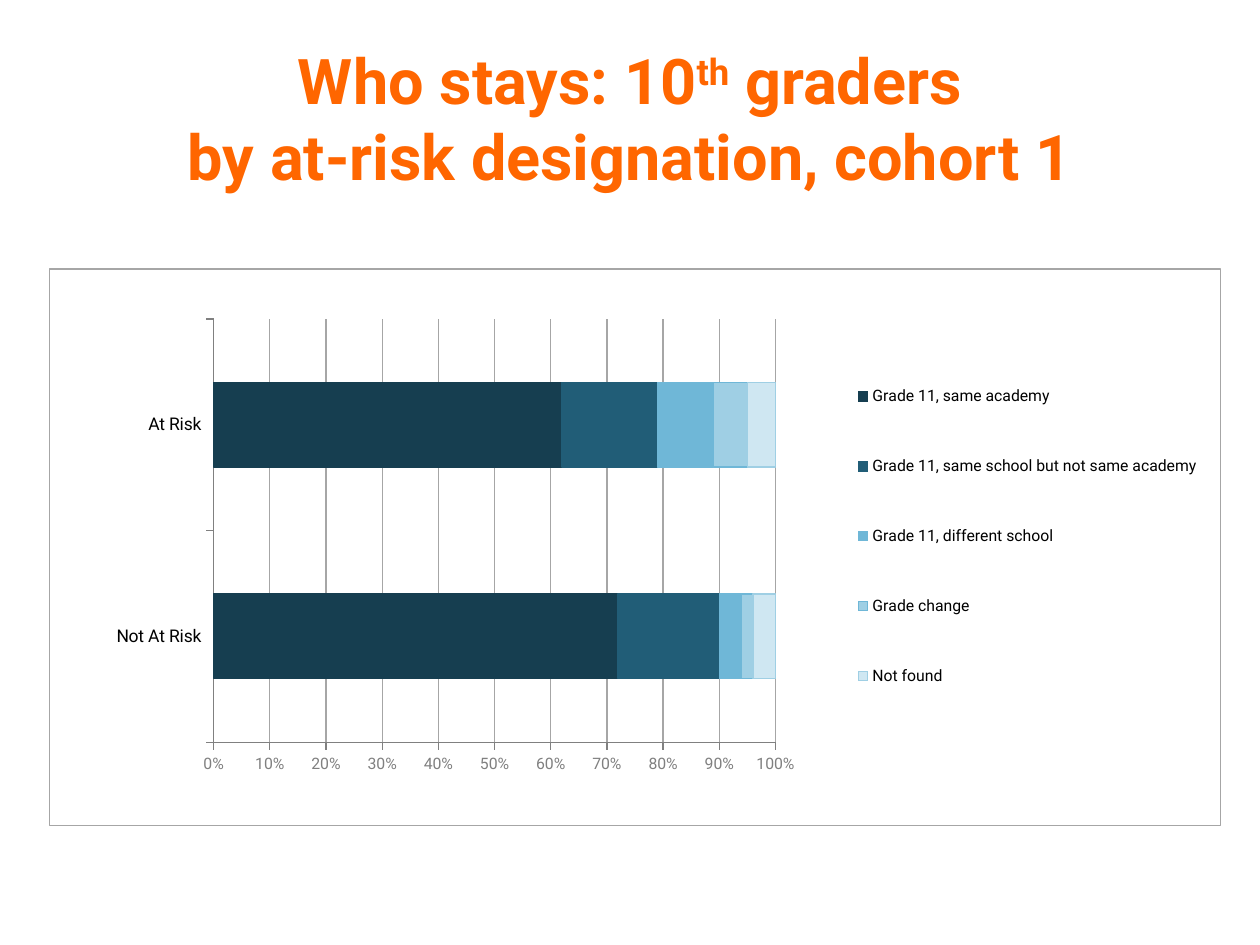
from lxml import etree
from pptx import Presentation
from pptx.chart.data import CategoryChartData
from pptx.dml.color import RGBColor
from pptx.enum.chart import XL_CHART_TYPE as ChartType
from pptx.enum.chart import XL_LEGEND_POSITION as LegendPos
from pptx.enum.chart import XL_TICK_MARK as Tick
from pptx.enum.text import MSO_ANCHOR as Anchor
from pptx.enum.text import PP_ALIGN as Align
from pptx.oxml import parse_xml
from pptx.oxml.ns import nsdecls, qn
from pptx.util import Inches, Pt


def rgb(value):
    return RGBColor.from_string(value)


class SlideBuilder:
    font = "Roboto"
    accent = "FF6600"
    text = "000000"
    muted = "808080"
    rule = "A6A6A6"
    thin = Pt(0.75)

    def __init__(self, slide):
        self.s = slide

    def title(self, box, runs):
        sp = self.s.shapes.add_textbox(*map(Inches, box))
        tf = sp.text_frame
        tf.word_wrap = True
        tf.vertical_anchor = Anchor.BOTTOM
        p = tf.paragraphs[0]
        p.alignment = Align.CENTER
        self.style(p.font, 36, self.accent, True)
        for text, baseline in runs:
            if text == "\n":
                p.add_line_break()
                continue
            r = p.add_run()
            r.text = text
            if baseline:
                r.font._element.set("baseline", str(baseline * 1000))

    def style(self, font, size, color, bold=False):
        font.name = self.font
        font.size = Pt(size)
        font.bold = bold
        font.color.rgb = rgb(color)

    def line(self, line, color):
        line.color.rgb = rgb(color)
        line.width = self.thin

    def layout(self, parent, previous, box, inner=False):
        target = '<c:layoutTarget val="inner"/>' if inner else ""
        modes = "".join(f'<c:{k}Mode val="edge"/>' for k in "xy")
        sizes = "".join(f'<c:{k} val="{v}"/>' for k, v in zip("xywh", box))
        for old in parent.findall(qn("c:layout")):
            parent.remove(old)
        node = parse_xml(f'<c:layout {nsdecls("c")}><c:manualLayout>{target}'
                         f'{modes}{sizes}</c:manualLayout></c:layout>')
        if previous is None:
            parent.insert(0, node)
        else:
            previous.addnext(node)

    def border(self, chart):
        chart_space = chart._chartSpace
        chart_space.find(qn("c:chart")).addnext(parse_xml(
            f'<c:spPr {nsdecls("c", "a")}><a:noFill/><a:ln w="{self.thin}">'
            f'<a:solidFill><a:srgbClr val="{self.rule}"/></a:solidFill>'
            f'</a:ln></c:spPr>'))
        rounded = chart_space.find(qn("c:roundedCorners"))
        if rounded is None:
            rounded = etree.Element(qn("c:roundedCorners"))
            date = chart_space.find(qn("c:date1904"))
            if date is None:
                chart_space.insert(0, rounded)
            else:
                date.addnext(rounded)
        rounded.set("val", "0")

    def stacked_bars(self, box, categories, series, plot_box, legend_box):
        data = CategoryChartData()
        data.categories = categories
        for name, values, fill, outline in series:
            data.add_series(name, values)
        chart = self.s.shapes.add_chart(
            ChartType.BAR_STACKED_100, *map(Inches, box), data).chart
        chart.has_title = False
        self.style(chart.font, 10, self.text)
        self.border(chart)

        plot = chart.plots[0]
        plot.gap_width = 150
        plot.overlap = 100
        plot.vary_by_categories = False
        for bar, (name, values, fill, outline) in zip(plot.series, series):
            bar.format.fill.solid()
            bar.format.fill.fore_color.rgb = rgb(fill)
            self.line(bar.format.line, outline)

        category, value = chart.category_axis, chart.value_axis
        for axis in (category, value):
            axis.major_tick_mark = Tick.OUTSIDE
            axis.minor_tick_mark = Tick.NONE
            self.line(axis.format.line, self.muted)
        self.style(category.tick_labels.font, 10, self.text)
        self.style(value.tick_labels.font, 9, self.muted)
        value.minimum_scale, value.maximum_scale = 0, 1
        value.major_unit = 0.1
        value.tick_labels.number_format = "0%"
        value.tick_labels.number_format_is_linked = False
        value.has_major_gridlines = True
        self.line(value.major_gridlines.format.line, self.rule)

        chart.has_legend = True
        legend = chart.legend
        legend.position = LegendPos.RIGHT
        legend.include_in_layout = False
        self.style(legend.font, 9, self.text)
        node = legend._element
        self.layout(node, node.find(qn("c:legendPos")), legend_box)
        self.layout(plot._element.getparent(), None, plot_box, inner=True)


def main():
    prs = Presentation()
    prs.slide_width, prs.slide_height = Inches(10), Inches(7.5)
    builder = SlideBuilder(prs.slides.add_slide(prs.slide_layouts[6]))
    builder.title((0.6, 0.12, 8.8, 1.46), [
        ("Who stays: 10", 0), ("th", 30), (" graders", 0), ("\n", 0),
        ("by at-risk designation, cohort 1", 0)])
    builder.stacked_bars(
        (0.39, 2.13, 9.3, 4.43),
        ["Not At Risk", "At Risk"],
        [("Grade 11, same academy", (72, 62), "163E50", "163E50"),
         ("Grade 11, same school but not same academy", (18, 17),
          "215D77", "215D77"),
         ("Grade 11, different school", (4, 10), "6FB7D7", "6FB7D7"),
         ("Grade change", (2, 6), "9FCFE4", "6FB7D7"),
         ("Not found", (4, 5), "CFE7F2", "9FCFE4")],
        plot_box=(0.14, 0.09, 0.48, 0.76),
        legend_box=(0.68, 0.12, 0.31, 0.72))
    prs.save("out.pptx")


if __name__ == "__main__":
    main()
